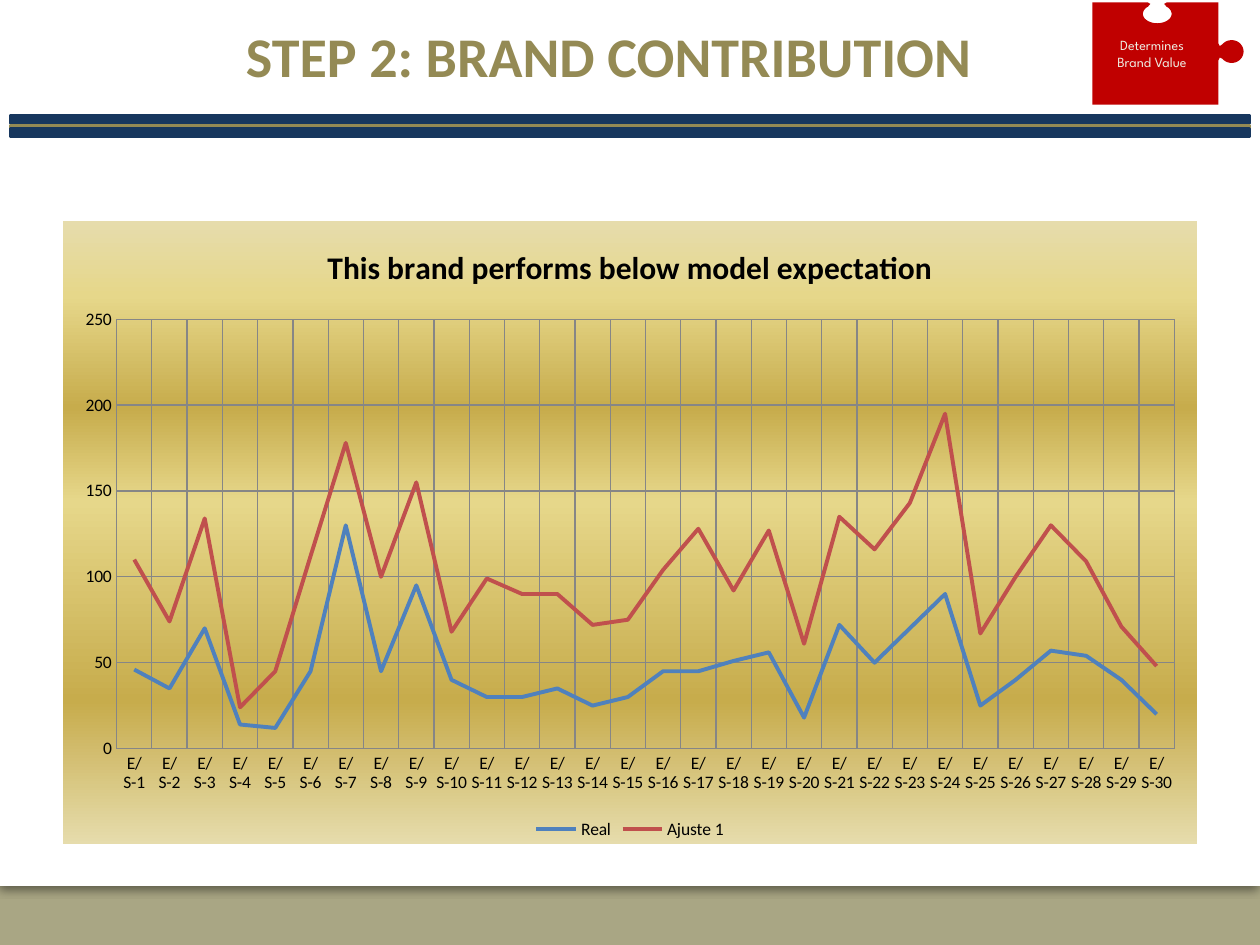
from math import cos, radians, sin

from pptx import Presentation
from pptx.chart.data import CategoryChartData
from pptx.dml.color import RGBColor
from pptx.enum.chart import (XL_CHART_TYPE, XL_LEGEND_POSITION, XL_MARKER_STYLE,
                             XL_TICK_MARK)
from pptx.enum.shapes import MSO_SHAPE
from pptx.enum.text import MSO_ANCHOR, PP_ALIGN
from pptx.oxml import parse_xml
from pptx.oxml.ns import nsdecls
from pptx.util import Cm, Pt


class Theme:
    backdrop = RGBColor.from_string("A9A684")
    white = RGBColor.from_string("FFFFFF")
    navy = RGBColor.from_string("17375E")
    gold = RGBColor.from_string("948A54")
    red = RGBColor.from_string("C00000")
    cream = RGBColor.from_string("EEECE1")
    black = RGBColor.from_string("000000")
    grid = RGBColor.from_string("868686")
    real = RGBColor.from_string("4F81BD")
    adjustment = RGBColor.from_string("C0504D")
    gradient = [(0, "E6DCAC"), (12, "E6D78A"), (30, "C7AC4C"),
                (45, "E6D78A"), (77, "C7AC4C"), (100, "E6DCAC")]
    font, badge_font = "Calibri", "League Spartan"
    title_size, chart_title_size = Pt(32), Pt(18)
    chart_size, badge_size = Pt(10), Pt(8)


def add_run(paragraph, text, name, size, color, bold=False):
    run = paragraph.add_run()
    run.text = text
    run.font.name, run.font.size, run.font.bold = name, size, bold
    run.font.color.rgb = color


def arc(center_x, center_y, radius_x, radius_y, start, end):
    """Points in cm along an elliptical arc, angles in degrees, clockwise."""
    return [(center_x + radius_x * cos(radians(angle)),
             center_y + radius_y * sin(radians(angle)))
            for angle in range(start, end + 1, 10)]


presentation = Presentation()
presentation.slide_width, presentation.slide_height = Cm(25.4), Cm(19.05)
slide = presentation.slides.add_slide(presentation.slide_layouts[5])
slide.background.fill.solid()
slide.background.fill.fore_color.rgb = Theme.backdrop

# White page with a soft shadow along its lower edge
page = slide.shapes.add_shape(MSO_SHAPE.RECTANGLE, 0, 0, Cm(25.4), Cm(17.86))
page.fill.solid()
page.fill.fore_color.rgb = Theme.white
page.line.fill.background()
page._element.spPr.append(parse_xml(
    f'<a:effectLst {nsdecls("a")}><a:outerShdw blurRad="{Pt(5)}" dist="{Pt(2)}" '
    'dir="5400000" algn="t" rotWithShape="0"><a:srgbClr val="000000">'
    '<a:alpha val="43000"/></a:srgbClr></a:outerShdw></a:effectLst>'))

# Navy band with a gold stripe
for top, height, color in [(2.34, 0.15, Theme.navy), (2.54, 0.1, Theme.gold),
                           (2.59, 0.15, Theme.navy)]:
    bar = slide.shapes.add_shape(MSO_SHAPE.RECTANGLE, Cm(0.21), Cm(top),
                                 Cm(24.98), Cm(height))
    bar.shadow.inherit = False
    bar.fill.solid()
    bar.fill.fore_color.rgb = color
    bar.line.color.rgb = color
    bar.line.width = Pt(2)

# Title, brought in front of the page
title = slide.shapes.title
title.left, title.top, title.width, title.height = Cm(1.9), Cm(0.13), Cm(20.75), Cm(1.98)
title.text_frame.vertical_anchor = MSO_ANCHOR.MIDDLE
title.text_frame.paragraphs[0].alignment = PP_ALIGN.CENTER
add_run(title.text_frame.paragraphs[0], "STEP 2: BRAND CONTRIBUTION",
        Theme.font, Theme.title_size, Theme.gold, True)
bar._element.addnext(title._element)

# Chart
chart_data = CategoryChartData()
chart_data.categories = [f"E/S-{number}" for number in range(1, 31)]
chart_data.add_series("Real", [
    46, 35, 70, 14, 12, 45, 130, 45, 95, 40, 30, 30, 35, 25, 30,
    45, 45, 51, 56, 18, 72, 50, 70, 90, 25, 40, 57, 54, 40, 20])
chart_data.add_series("Ajuste 1", [
    64, 39, 64, 10, 33, 67, 48, 55, 60, 28, 69, 60, 55, 47, 45,
    59, 83, 41, 71, 43, 63, 66, 73, 105, 42, 60, 73, 55, 31, 28])
chart = slide.shapes.add_chart(XL_CHART_TYPE.LINE_STACKED, Cm(1.27), Cm(4.45),
                               Cm(22.86), Cm(12.57), chart_data).chart
chart.font.name, chart.font.size = Theme.font, Theme.chart_size
chart.font.color.rgb = Theme.black
chart.has_title = True
add_run(chart.chart_title.text_frame.paragraphs[0],
        "This brand performs below model expectation",
        Theme.font, Theme.chart_title_size, Theme.black, True)
chart.chart_title.include_in_layout = False
chart.has_legend = True
chart.legend.position = XL_LEGEND_POSITION.BOTTOM
chart.legend.include_in_layout = False

for axis in (chart.category_axis, chart.value_axis):
    axis.major_tick_mark = axis.minor_tick_mark = XL_TICK_MARK.NONE
    axis.has_major_gridlines = True
    for line in (axis.major_gridlines.format.line, axis.format.line):
        line.color.rgb = Theme.grid
        line.width = Pt(0.75)
chart.value_axis.format.line.fill.background()

chart.plots[0].vary_by_categories = False
for series, color in zip(chart.plots[0].series, (Theme.real, Theme.adjustment)):
    series.smooth = False
    series.marker.style = XL_MARKER_STYLE.NONE
    series.format.line.color.rgb = color
    series.format.line.width = Pt(2.25)

stops = "".join(f'<a:gs pos="{position * 1000}"><a:srgbClr val="{color}"/></a:gs>'
                for position, color in Theme.gradient)
chart._chartSpace.find("{*}txPr").addprevious(parse_xml(
    f'<c:spPr {nsdecls("c", "a")}><a:gradFill><a:gsLst>{stops}</a:gsLst>'
    '<a:lin ang="5400000" scaled="0"/></a:gradFill><a:ln><a:noFill/></a:ln></c:spPr>'))

# Puzzle piece: a square body with a tab on the right and a notch on top
left, top, right, bottom = 22.02, 0.05, 24.56, 2.11
tab = [(right, 0.87), (24.59, 0.93),
       *arc(24.83, 1.04, 0.24, 0.23, -140, 140), (24.59, 1.16), (right, 1.22)]
notch = [(23.52, top), (23.47, 0.08),
         *arc(23.33, 0.28, 0.29, 0.19, -50, 230), (23.19, 0.08), (23.14, top)]
outline = [(right, top), *tab, (right, bottom), (left, bottom), (left, top), *notch[::-1]]
points = [(Cm(x), Cm(y)) for x, y in outline]
builder = slide.shapes.build_freeform(*points[0])
builder.add_line_segments(points[1:], close=True)
piece = builder.convert_to_shape()
piece.shadow.inherit = False
piece.fill.solid()
piece.fill.fore_color.rgb = Theme.red
piece.line.fill.background()
frame = piece.text_frame
frame.word_wrap = True
frame.vertical_anchor = MSO_ANCHOR.MIDDLE
frame.margin_left, frame.margin_right = Cm(0.25), Cm(0.89)
frame.margin_top = frame.margin_bottom = Cm(0.13)
for index, text in enumerate(["Determines", "Brand Value"]):
    paragraph = frame.add_paragraph() if index else frame.paragraphs[0]
    paragraph.alignment = PP_ALIGN.CENTER
    add_run(paragraph, text, Theme.badge_font, Theme.badge_size, Theme.cream)

presentation.save("out.pptx")
